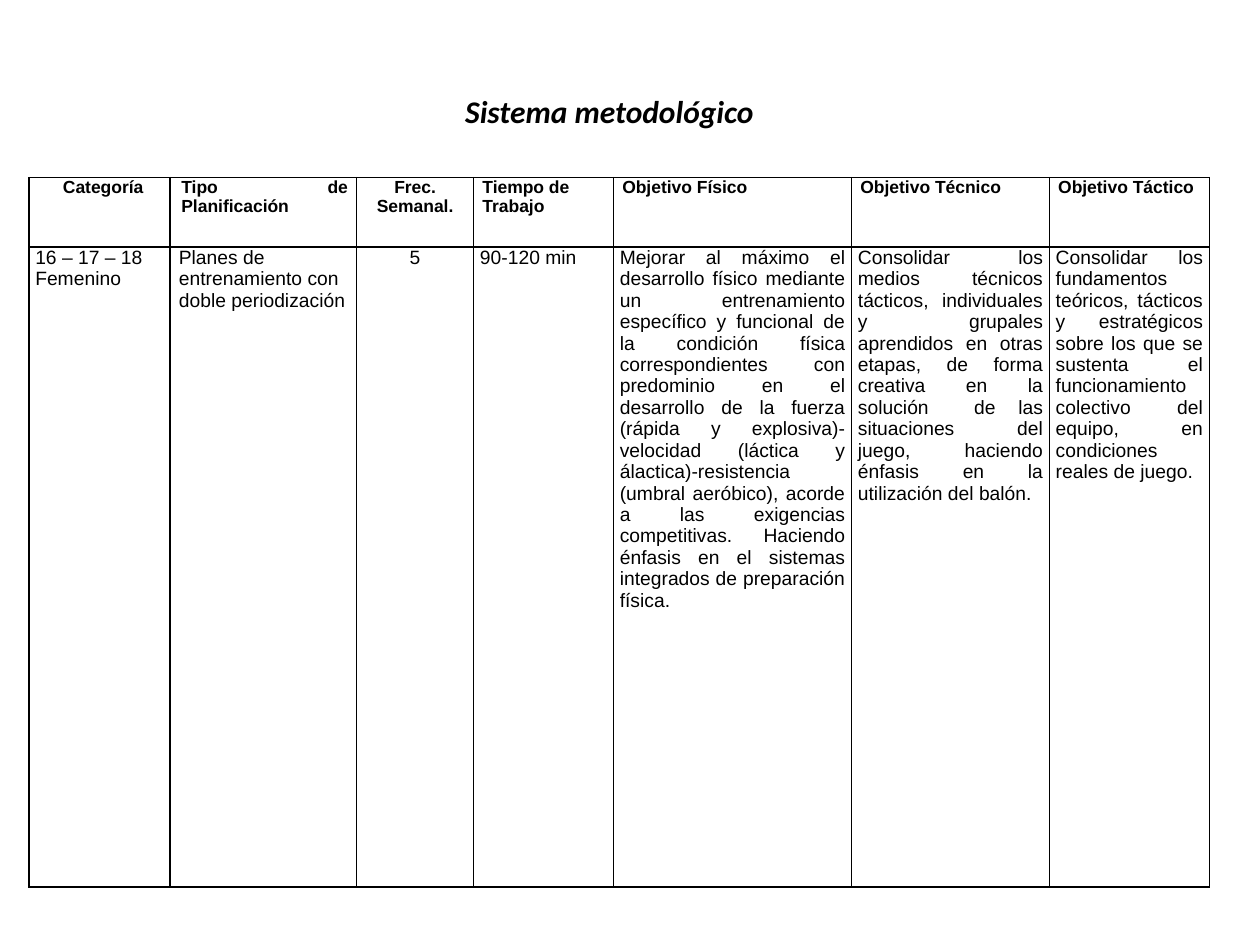
from dataclasses import dataclass

from lxml import etree
from pptx import Presentation
from pptx.dml.color import RGBColor
from pptx.enum.text import MSO_ANCHOR, MSO_AUTO_SIZE, PP_ALIGN
from pptx.oxml.ns import qn
from pptx.table import _Cell
from pptx.text.text import TextFrame
from pptx.util import Inches, Pt

LEFT = PP_ALIGN.LEFT
CENTER = PP_ALIGN.CENTER
JUSTIFY = PP_ALIGN.JUSTIFY
TOP = MSO_ANCHOR.TOP
FIT_SHAPE = MSO_AUTO_SIZE.SHAPE_TO_FIT_TEXT

BLACK = RGBColor(0x00, 0x00, 0x00)
TITLE_ONLY = 5
HEADER_HEIGHT = 0.55
BODY_HEIGHT = 5.08
BORDER_WIDTH = Pt(1)


@dataclass(frozen=True)
class Entry:
    text: str
    alignment: PP_ALIGN = JUSTIFY
    indent: float = 0


@dataclass(frozen=True)
class Column:
    width: float
    header: Entry
    body: Entry


COLUMNS = [
    Column(1.12, Entry("Categoría", indent=0.2), Entry("16 – 17 – 18\nFemenino")),
    Column(
        1.48,
        Entry("Tipo de Planificación", indent=0.02),
        Entry("Planes de entrenamiento con doble periodización", LEFT, 0.02),
    ),
    Column(0.93, Entry("Frec. Semanal.", CENTER), Entry("5", CENTER)),
    Column(1.11, Entry("Tiempo de Trabajo", LEFT), Entry("90-120 min")),
    Column(
        1.89,
        Entry("Objetivo Físico"),
        Entry(
            "Mejorar al máximo el desarrollo físico mediante un entrenamiento "
            "específico y funcional de la condición física correspondientes con "
            "predominio en el desarrollo de la fuerza (rápida y explosiva)-velocidad "
            "(láctica y álactica)-resistencia (umbral aeróbico), acorde a las "
            "exigencias competitivas. Haciendo énfasis en el sistemas integrados "
            "de preparación física. "
        ),
    ),
    Column(
        1.57,
        Entry("Objetivo Técnico"),
        Entry(
            "Consolidar los medios técnicos tácticos, individuales y grupales "
            "aprendidos en otras etapas, de forma creativa en la solución  de las "
            "situaciones  del juego, haciendo énfasis en la utilización del balón."
        ),
    ),
    Column(
        1.27,
        Entry("Objetivo Táctico"),
        Entry(
            "Consolidar los fundamentos teóricos, tácticos y estratégicos sobre los "
            "que se sustenta el funcionamiento colectivo del equipo, en condiciones "
            "reales de juego."
        ),
    ),
]


def write_text(
    frame: TextFrame,
    text: str,
    *,
    size: float,
    font: str = "Arial",
    bold: bool = False,
    italic: bool = False,
    alignment: PP_ALIGN = LEFT,
    indent: float = 0,
) -> None:
    frame.text = text
    for paragraph in frame.paragraphs:
        paragraph.alignment = alignment
        if indent:
            paragraph._p.get_or_add_pPr().set("marL", str(Inches(indent)))
        for run in paragraph.runs:
            run.font.name = font
            run.font.size = Pt(size)
            run.font.bold = bold
            run.font.italic = italic
            run.font.color.rgb = BLACK


def add_borders(cell: _Cell) -> None:
    properties = cell._tc.get_or_add_tcPr()
    for position, side in enumerate(("lnL", "lnR", "lnT", "lnB")):
        line = etree.Element(qn(f"a:{side}"), w=str(BORDER_WIDTH))
        fill = etree.SubElement(line, qn("a:solidFill"))
        etree.SubElement(fill, qn("a:srgbClr"), val=str(BLACK))
        properties.insert(position, line)


def fill_cell(cell: _Cell, entry: Entry, margin: float, size: float, bold: bool) -> None:
    cell.fill.background()
    cell.margin_left = cell.margin_right = Inches(margin)
    cell.margin_top = cell.margin_bottom = 0
    cell.vertical_anchor = TOP
    write_text(
        cell.text_frame,
        entry.text,
        size=size,
        bold=bold,
        alignment=entry.alignment,
        indent=entry.indent,
    )
    add_borders(cell)


def add_title(slide) -> None:
    title = slide.shapes.title
    title.left, title.top = Inches(3.58), Inches(0.68)
    title.width, title.height = Inches(2.57), Inches(0.4)
    frame = title.text_frame
    frame.word_wrap = False
    frame.auto_size = FIT_SHAPE
    frame.vertical_anchor = TOP
    write_text(
        frame,
        "Sistema metodológico ",
        size=18,
        font="Calibri",
        bold=True,
        italic=True,
        alignment=CENTER,
    )


def add_plan_table(slide) -> None:
    width = sum(column.width for column in COLUMNS)
    table = slide.shapes.add_table(
        2,
        len(COLUMNS),
        Inches(0.23),
        Inches(1.41),
        Inches(width),
        Inches(HEADER_HEIGHT + BODY_HEIGHT),
    ).table
    table.first_row = table.horz_banding = False
    table.rows[0].height = Inches(HEADER_HEIGHT)
    table.rows[1].height = Inches(BODY_HEIGHT)
    for index, column in enumerate(COLUMNS):
        table.columns[index].width = Inches(column.width)
        fill_cell(table.cell(0, index), column.header, margin=0.07, size=10, bold=True)
        fill_cell(table.cell(1, index), column.body, margin=0.05, size=11, bold=False)


def main() -> None:
    presentation = Presentation()
    presentation.slide_width = Inches(10)
    presentation.slide_height = Inches(7.5)
    slide = presentation.slides.add_slide(presentation.slide_layouts[TITLE_ONLY])
    add_plan_table(slide)
    add_title(slide)
    presentation.save("out.pptx")


if __name__ == "__main__":
    main()
